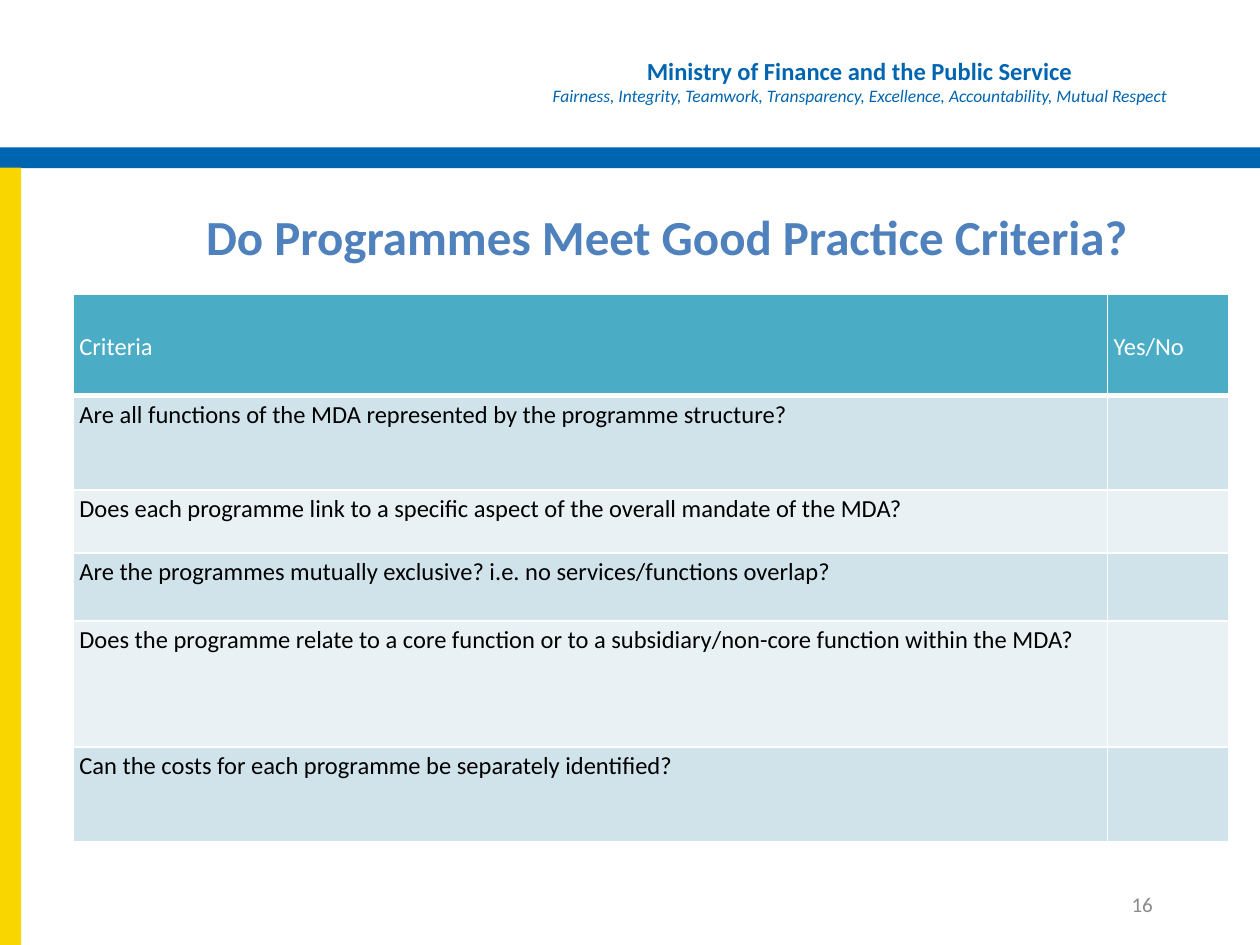
from dataclasses import dataclass

from lxml import etree
from pptx import Presentation
from pptx.dml.color import RGBColor
from pptx.enum.shapes import MSO_SHAPE
from pptx.enum.text import MSO_ANCHOR, PP_ALIGN
from pptx.oxml.ns import qn
from pptx.util import Cm, Pt

RECTANGLE = MSO_SHAPE.RECTANGLE
TOP, MIDDLE = MSO_ANCHOR.TOP, MSO_ANCHOR.MIDDLE
LEFT, CENTER, RIGHT = PP_ALIGN.LEFT, PP_ALIGN.CENTER, PP_ALIGN.RIGHT

TITLE_ONLY = 5
FONT = "Calibri"
BLUE, YELLOW, TITLE_BLUE = "0065B0", "F9D600", "4F81BD"
TEAL, BAND_DARK, BAND_LIGHT = "4BACC6", "D0E3EA", "E9F1F5"
WHITE, BLACK, GREY = "FFFFFF", "000000", "8C8C8C"


@dataclass
class Box:
    """Position and size in centimetres."""
    left: float
    top: float
    width: float
    height: float

    def lengths(self) -> list:
        return [Cm(n) for n in (self.left, self.top, self.width, self.height)]


@dataclass
class Line:
    text: str
    size: float
    color: str
    bold: bool = False
    italic: bool = False


@dataclass
class Row:
    height: float
    texts: tuple
    fill: str
    color: str = BLACK
    anchor: MSO_ANCHOR = TOP
    bottom_border: float = 1


BARS = [
    (Box(0, 2.97, 25.4, 0.42), BLUE),
    (Box(0, 3.38, 0.43, 15.67), YELLOW),
]
MINISTRY_LINES = [
    Line("Ministry of Finance and the Public Service", 14, BLUE, bold=True),
    Line("Fairness, Integrity, Teamwork, Transparency, Excellence, "
         "Accountability, Mutual Respect", 10, BLUE, italic=True),
]
TITLE = Line("Do Programmes Meet Good Practice Criteria? ", 28, TITLE_BLUE, bold=True)
QUESTIONS = [
    (1.9, "Are all functions of the MDA represented by the programme structure?"),
    (1.27, "Does each programme link to a specific aspect of the overall mandate of the MDA?"),
    (1.37, "Are the programmes mutually exclusive? i.e. no services/functions overlap?"),
    (2.54, "Does the programme relate to a core function or to a "
           "subsidiary/non-core function within the MDA?"),
    (1.9, "Can the costs for each programme be separately identified?"),
]
COLUMN_WIDTHS = (20.85, 2.44)


def rgb(color: str) -> RGBColor:
    return RGBColor.from_string(color)


def set_format(target, values: dict) -> None:
    for name, value in values.items():
        setattr(target, name, value)


def write_lines(frame, lines: list, alignment=LEFT, spacing: float = 1.0) -> None:
    for index, line in enumerate(lines):
        paragraph = frame.add_paragraph() if index else frame.paragraphs[0]
        set_format(paragraph, {"alignment": alignment, "line_spacing": spacing})
        run = paragraph.add_run()
        run.text = line.text
        set_format(run.font, {"name": FONT, "size": Pt(line.size),
                              "bold": line.bold, "italic": line.italic})
        run.font.color.rgb = rgb(line.color)


def add_bar(slide, box: Box, color: str) -> None:
    bar = slide.shapes.add_shape(RECTANGLE, *box.lengths())
    bar.shadow.inherit = False
    bar.fill.solid()
    bar.fill.fore_color.rgb = rgb(color)
    bar.line.fill.background()


def add_text(slide, box: Box, lines: list, alignment, anchor=TOP) -> None:
    frame = slide.shapes.add_textbox(*box.lengths()).text_frame
    set_format(frame, {"word_wrap": True, "vertical_anchor": anchor})
    write_lines(frame, lines, alignment)


def add_title(slide, box: Box, line: Line) -> None:
    title = slide.shapes.title
    set_format(title, dict(zip(("left", "top", "width", "height"), box.lengths())))
    set_format(title.text_frame, {"word_wrap": True, "vertical_anchor": MIDDLE})
    write_lines(title.text_frame, [line], CENTER)


def add_borders(cell, bottom: float) -> None:
    properties = cell._tc.get_or_add_tcPr()
    for side, width in (("L", 1), ("R", 1), ("T", 1), ("B", bottom)):
        border = etree.SubElement(properties, qn(f"a:ln{side}"), w=str(Pt(width)))
        fill = etree.SubElement(border, qn("a:solidFill"))
        etree.SubElement(fill, qn("a:srgbClr"), val=WHITE)


def format_cell(cell, row: Row, text: str) -> None:
    add_borders(cell, row.bottom_border)
    cell.fill.solid()
    cell.fill.fore_color.rgb = rgb(row.fill)
    set_format(cell, {"margin_left": Cm(0.12), "margin_right": Cm(0.12),
                      "margin_top": 0, "margin_bottom": 0,
                      "vertical_anchor": row.anchor})
    if text:
        write_lines(cell.text_frame, [Line(text, 14, row.color)], spacing=1.15)


def add_criteria_table(slide, left: float, top: float, rows: list) -> None:
    box = Box(left, top, sum(COLUMN_WIDTHS), sum(row.height for row in rows))
    table = slide.shapes.add_table(len(rows), len(COLUMN_WIDTHS), *box.lengths()).table
    table.horz_banding = False
    for column, width in zip(table.columns, COLUMN_WIDTHS):
        column.width = Cm(width)
    for table_row, row in zip(table.rows, rows):
        table_row.height = Cm(row.height)
        for cell, text in zip(table_row.cells, row.texts):
            format_cell(cell, row, text)


def main() -> None:
    presentation = Presentation()
    set_format(presentation, {"slide_width": Cm(25.4), "slide_height": Cm(19.05)})
    slide = presentation.slides.add_slide(presentation.slide_layouts[TITLE_ONLY])

    for box, color in BARS:
        add_bar(slide, box, color)
    add_text(slide, Box(10.03, 1, 14.6, 1.27), MINISTRY_LINES, CENTER)
    add_title(slide, Box(1.9, 4.02, 23.3, 1.48), TITLE)

    rows = [Row(2.05, ("Criteria", "Yes/No"), TEAL, WHITE, MIDDLE, 3)]
    for index, (height, question) in enumerate(QUESTIONS):
        rows.append(Row(height, (question, ""), BAND_LIGHT if index % 2 else BAND_DARK))
    add_criteria_table(slide, 1.48, 5.93, rows)

    add_text(slide, Box(18.2, 17.8, 5.29, 0.85), [Line("16", 12, GREY)], RIGHT, MIDDLE)
    presentation.save("out.pptx")


if __name__ == "__main__":
    main()
